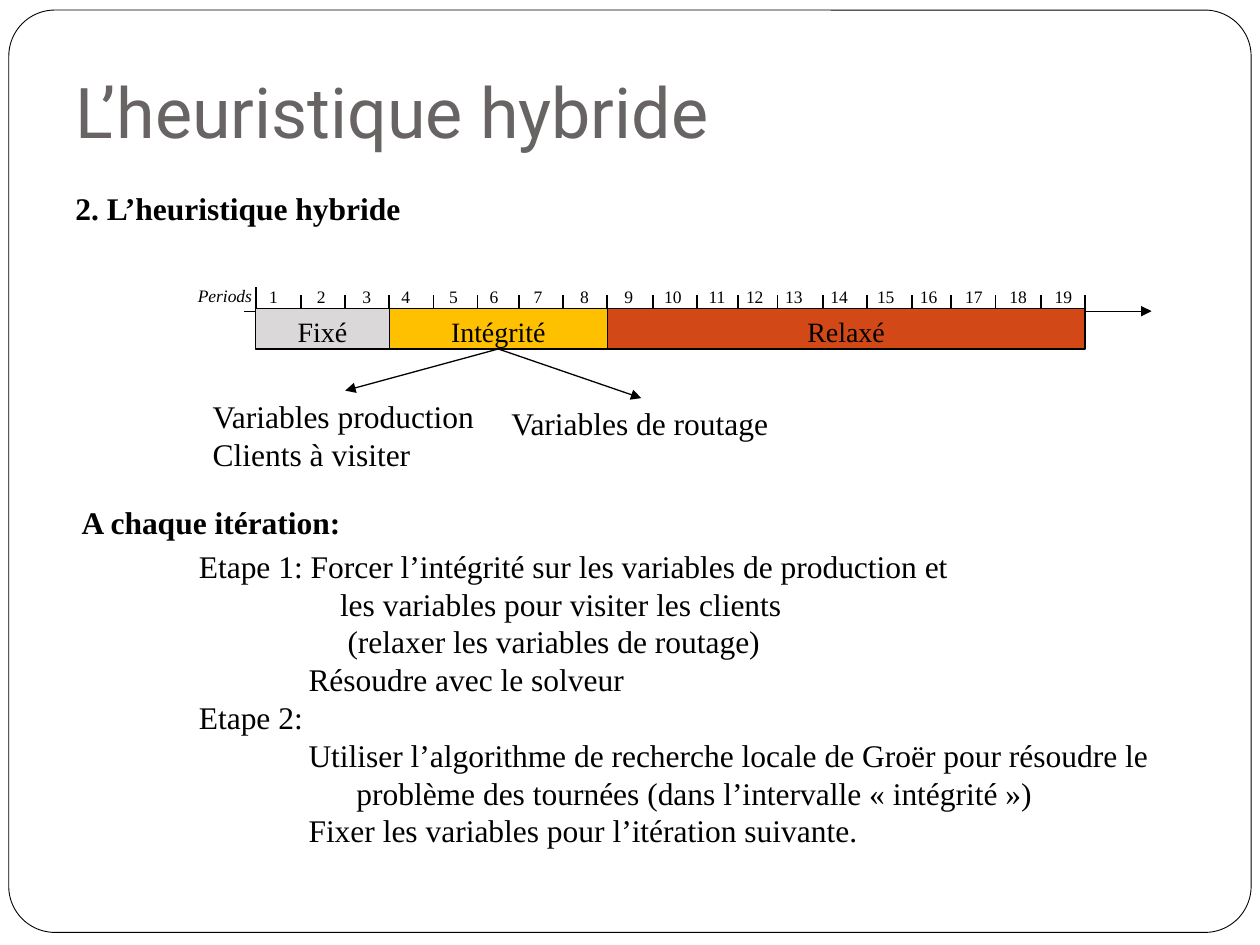
from dataclasses import dataclass

from lxml import etree
from pptx import Presentation
from pptx import util as u
from pptx.dml.color import RGBColor
from pptx.enum import shapes, text
from pptx.oxml import ns


@dataclass(frozen=True)
class Theme:
    ink: str = "000000"
    paper: str = "FFFFFF"
    heading: str = "696464"
    fixed: str = "DAD8D8"
    integral: str = "FFC000"
    relaxed: str = "D34817"
    heading_font: str = "Roboto"
    body_font: str = "Times New Roman"
    heading_size: int = 40
    body_size: int = 18
    bar_size: int = 16
    period_size: int = 10
    frame_line: float = 0.5
    thin_line: float = 0.75
    tick_line: float = 1


THEME = Theme()
ALIGN = text.PP_ALIGN
ANCHOR = text.MSO_ANCHOR
PERIOD_EDGES = [2.03, 2.39, 2.74, 3.09, 3.44, 3.79, 4.12, 4.47, 4.82, 5.18,
                5.53, 5.86, 6.17, 6.53, 6.88, 7.24, 7.55, 7.9, 8.26, 8.61]
PERIOD_CENTRES = [2.17, 2.55, 2.91, 3.22, 3.6, 3.92, 4.27, 4.64, 4.99, 5.34,
                  5.69, 5.99, 6.3, 6.66, 7.03, 7.37, 7.73, 8.08, 8.44]
STEPS = [
    ("Etape 1: Forcer l’intégrité sur les variables de production et"
     "\vles variables pour visiter les clients", 1.12, -1.12),
    ("(relaxer les variables de routage)", 1.18, 0),
    ("Résoudre avec le solveur", 0.87, 0),
    ("Etape 2:", 0, 0),
    ("Utiliser l’algorithme de recherche locale de Groër pour résoudre le", 0.87, 0),
    ("problème des tournées (dans l’intervalle «\u00a0intégrité\u00a0»)", 1.25, 0),
    ("Fixer les variables pour l’itération suivante.", 0.87, 0),
]


def inches(values):
    return [u.Inches(value) for value in values]


def write(frame, lines, size=THEME.body_size, font=THEME.body_font, color=THEME.ink,
          bold=False, italic=False, align=ALIGN.LEFT, anchor=ANCHOR.TOP,
          insets=(0.1, 0.05, 0.1, 0.05), wrap=True):
    frame.word_wrap = wrap
    frame.vertical_anchor = anchor
    (frame.margin_left, frame.margin_top,
     frame.margin_right, frame.margin_bottom) = inches(insets)
    for index, (line, margin, indent) in enumerate(lines):
        paragraph = frame.add_paragraph() if index else frame.paragraphs[0]
        paragraph.text = line
        paragraph.alignment = align
        if margin:
            properties = paragraph._p.get_or_add_pPr()
            properties.set("marL", str(u.Inches(margin)))
            properties.set("indent", str(u.Inches(indent)))
        for run in paragraph.runs:
            run.font.size = u.Pt(size)
            run.font.name = font
            run.font.bold = bold
            run.font.italic = italic
            run.font.color.rgb = RGBColor.from_string(color)


def add_text(slide, box, *lines, **style):
    label = slide.shapes.add_textbox(*inches(box))
    write(label.text_frame, [(line, 0, 0) for line in lines], **style)


def add_panel(slide, kind, box, fill, width):
    panel = slide.shapes.add_shape(kind, *inches(box))
    panel.shadow.inherit = False
    panel.fill.solid()
    panel.fill.fore_color.rgb = RGBColor.from_string(fill)
    panel.line.color.rgb = RGBColor.from_string(THEME.ink)
    panel.line.width = u.Pt(width)
    return panel


def add_line(slide, start, end, width, arrow=False):
    line = slide.shapes.add_connector(shapes.MSO_CONNECTOR.STRAIGHT, *inches(start + end))
    line.line.color.rgb = RGBColor.from_string(THEME.ink)
    line.line.width = u.Pt(width)
    if arrow:
        etree.SubElement(line.line._get_or_add_ln(), ns.qn("a:tailEnd"), type="triangle")
    etree.SubElement(line._element.spPr, ns.qn("a:effectLst"))
    return line


def add_frame(slide, box):
    frame = add_panel(slide, shapes.MSO_SHAPE.ROUNDED_RECTANGLE, box,
                      THEME.paper, THEME.frame_line)
    frame.adjustments[0] = 0.05


def add_headings(slide, box):
    left, top, width, height = box
    add_text(slide, (left, top, width, 0.91), "L’heuristique hybride",
             size=THEME.heading_size, font=THEME.heading_font, color=THEME.heading,
             anchor=ANCHOR.BOTTOM, insets=(0.1, 0.05, 0.1, 0.1))
    add_text(slide, (left, top + height - 0.33, width, 0.33),
             "2. L’heuristique hybride", bold=True)


def add_timeline(slide, box):
    left, top, width, height = box
    bar_top, bar_height = top + height - 0.32, 0.32
    axis = bar_top + 0.02
    origin = PERIOD_EDGES[0]
    add_text(slide, (left, top, 0.73, 0.25), "Periods",
             size=THEME.period_size, italic=True, align=ALIGN.CENTER)
    add_line(slide, (origin, axis + 0.2), (origin, top + 0.07), THEME.tick_line)
    add_line(slide, (origin - 0.09, axis), (left + width, axis), THEME.thin_line, arrow=True)
    for edge in PERIOD_EDGES:
        add_line(slide, (edge, axis), (edge, axis - 0.13), THEME.tick_line)
    for period, centre in enumerate(PERIOD_CENTRES, start=1):
        add_text(slide, (centre - 0.17, top + 0.01, 0.34, 0.25), str(period),
                 size=THEME.period_size, align=ALIGN.CENTER, insets=(0, 0.05, 0, 0.05))

    bars = {}
    for name, first, last, fill in [("Fixé", 0, 3, THEME.fixed),
                                    ("Intégrité", 3, 8, THEME.integral),
                                    ("Relaxé", 8, 19, THEME.relaxed)]:
        start, end = PERIOD_EDGES[first], PERIOD_EDGES[last]
        bars[name] = add_panel(slide, shapes.MSO_SHAPE.FLOWCHART_PROCESS,
                               (start, bar_top, end - start, bar_height),
                               fill, THEME.thin_line)
        write(bars[name].text_frame, [(name, 0, 0)], size=THEME.bar_size,
              align=ALIGN.CENTER)
    return bars["Intégrité"]


def add_variables(slide, box, integral_bar):
    left, top, width, height = box
    branches = [
        ((left, top, 2.3, height), (2.74, top),
         ["Variables production", "Clients à visiter"]),
        ((left + width - 2.26, top + 0.06, 2.26, 0.4), (5.09, top + 0.06),
         ["Variables de routage"]),
    ]
    for label_box, tip, lines in branches:
        add_text(slide, label_box, *lines)
        arrow = add_line(slide, (3.96, 2.77), tip, THEME.thin_line, arrow=True)
        arrow.begin_connect(integral_bar, 2)


def add_iteration(slide, box):
    left, top, width, height = box
    add_text(slide, (left, top, 2.28, 0.4), "A chaque itération:", bold=True)
    steps = slide.shapes.add_textbox(
        *inches((left + 0.93, top + 0.35, width - 0.93, height - 0.35)))
    write(steps.text_frame, STEPS)


def main():
    deck = Presentation()
    deck.slide_width, deck.slide_height = inches((10, 7.5))
    slide = deck.slides.add_slide(deck.slide_layouts[6])
    add_frame(slide, (0.07, 0.08, 9.86, 7.32))
    add_headings(slide, (0.5, 0.4, 9, 1.38))
    integral_bar = add_timeline(slide, (1.42, 2.21, 7.72, 0.56))
    add_variables(slide, (1.59, 3.1, 4.63, 0.71), integral_bar)
    add_iteration(slide, (0.55, 3.94, 8.75, 2.87))
    deck.save("out.pptx")


if __name__ == "__main__":
    main()
